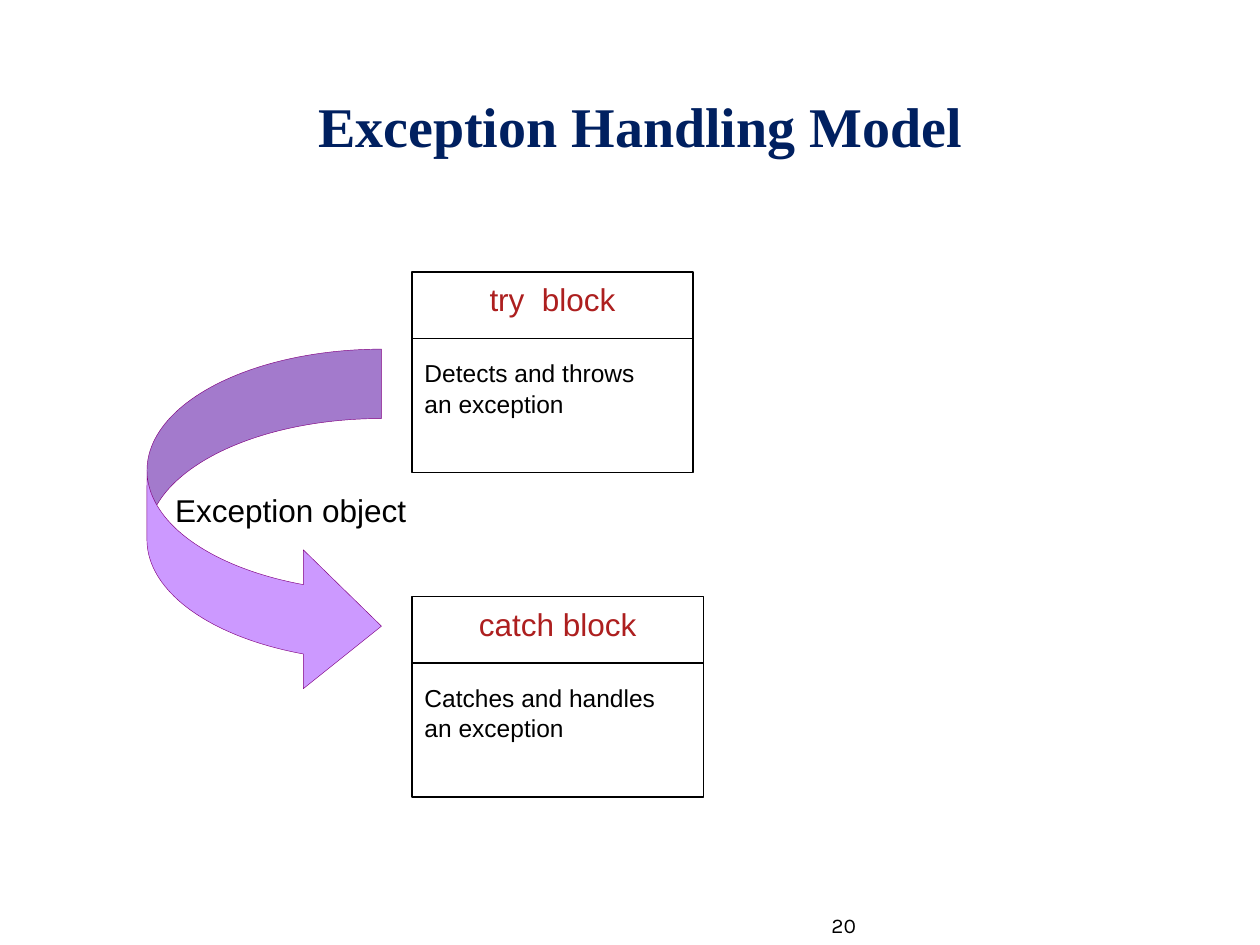
from dataclasses import dataclass

from lxml.etree import SubElement
from pptx import Presentation
from pptx.dml.color import RGBColor as Color
from pptx.enum.shapes import MSO_CONNECTOR as Connector
from pptx.enum.shapes import MSO_SHAPE as Shape
from pptx.enum.text import MSO_ANCHOR as Anchor
from pptx.enum.text import PP_ALIGN as Align
from pptx.oxml.ns import qn
from pptx.slide import Slide
from pptx.util import Pt


@dataclass(frozen=True)
class Theme:
    title: Color = Color(0x00, 0x20, 0x60)
    heading: Color = Color(0xAD, 0x1F, 0x1F)
    ink: Color = Color(0, 0, 0)
    paper: Color = Color(0xFF, 0xFF, 0xFF)
    arrow: Color = Color(0xCC, 0x99, 0xFF)
    arrow_edge: Color = Color(0x80, 0, 0x80)
    title_font: str = "Times New Roman"
    body_font: str = "Arial"
    number_font: str = "Karla"
    title_size: float = 32
    heading_size: float = 18
    detail_size: float = 14
    number_size: float = 12
    line_spacing: float = 1.05
    detail_gap: float = 22
    border: float = 0.75
    arrow_border: float = 0.25


@dataclass(frozen=True)
class Area:
    left: float
    top: float
    width: float
    height: float

    def lengths(self) -> tuple:
        return Pt(self.left), Pt(self.top), Pt(self.width), Pt(self.height)


@dataclass(frozen=True)
class Block:
    heading: str
    details: tuple[str, ...]
    area: Area


@dataclass(frozen=True)
class Label:
    text: str
    area: Area
    font: str
    size: float
    color: Color
    bold: bool = False
    align: Align = Align.LEFT
    anchor: Anchor = Anchor.TOP


THEME = Theme()
DIVIDER_DROP = 37.8

BLOCKS = (
    Block("try  block", ("Detects and throws", "an exception"),
          Area(235.5, 155.5, 160.5, 114.5)),
    Block("catch block", ("Catches and handles", "an exception"),
          Area(235.5, 341, 166.5, 114.5)),
)

LABELS = (
    Label("Exception Handling Model", Area(24, 37.5, 684, 66), THEME.title_font,
          THEME.title_size, THEME.title, True, Align.CENTER, Anchor.MIDDLE),
    Label("Exception object", Area(93, 276, 174, 29), THEME.body_font,
          THEME.heading_size, THEME.ink),
    Label("20", Area(468, 517, 198, 23), THEME.number_font,
          THEME.number_size, THEME.ink),
)


def style_paragraph(para, text: str, font: str, size: float, color: Color,
                    align: Align = Align.LEFT, bold: bool = False) -> None:
    para.text = text
    para.alignment = align
    para.line_spacing = THEME.line_spacing
    para.font.name = font
    para.font.size = Pt(size)
    para.font.bold = bold
    para.font.color.rgb = color


def draw_shape(slide: Slide, kind: Shape, area: Area, fill: Color,
               edge: Color, border: float):
    shape = slide.shapes.add_shape(kind, *area.lengths())
    shape.shadow.inherit = False
    shape.fill.solid()
    shape.fill.fore_color.rgb = fill
    shape.line.color.rgb = edge
    shape.line.width = Pt(border)
    return shape


def draw_block(slide: Slide, block: Block) -> None:
    area = block.area
    box = draw_shape(slide, Shape.RECTANGLE, area, THEME.paper, THEME.ink, THEME.border)
    frame = box.text_frame
    frame.word_wrap = True
    frame.vertical_anchor = Anchor.TOP
    style_paragraph(frame.paragraphs[0], block.heading, THEME.body_font,
                    THEME.heading_size, THEME.heading, Align.CENTER)
    for index, detail in enumerate(block.details):
        para = frame.add_paragraph()
        style_paragraph(para, detail, THEME.body_font, THEME.detail_size, THEME.ink)
        para.space_before = Pt(0 if index else THEME.detail_gap)

    level = Pt(area.top + DIVIDER_DROP)
    divider = slide.shapes.add_connector(
        Connector.STRAIGHT, Pt(area.left), level, Pt(area.left + area.width), level)
    divider.line.color.rgb = THEME.ink
    divider.line.width = Pt(THEME.border)
    SubElement(divider.element.spPr, qn("a:effectLst"))


def draw_arrow(slide: Slide) -> None:
    arrow = draw_shape(slide, Shape.CURVED_RIGHT_ARROW, Area(84, 199.5, 134, 198),
                       THEME.arrow, THEME.arrow_edge, THEME.arrow_border)
    for index, value in enumerate((0.296, 0.592, 0.333)):
        arrow.adjustments[index] = value


def draw_label(slide: Slide, label: Label) -> None:
    box = slide.shapes.add_textbox(*label.area.lengths())
    frame = box.text_frame
    frame.word_wrap = True
    frame.vertical_anchor = label.anchor
    style_paragraph(frame.paragraphs[0], label.text, label.font, label.size,
                    label.color, label.align, label.bold)


def main() -> None:
    deck = Presentation()
    deck.slide_width, deck.slide_height = Pt(720), Pt(540)
    page = deck.slides.add_slide(deck.slide_layouts[6])
    for block in BLOCKS:
        draw_block(page, block)
    draw_arrow(page)
    for label in LABELS:
        draw_label(page, label)
    deck.save("out.pptx")


if __name__ == "__main__":
    main()
